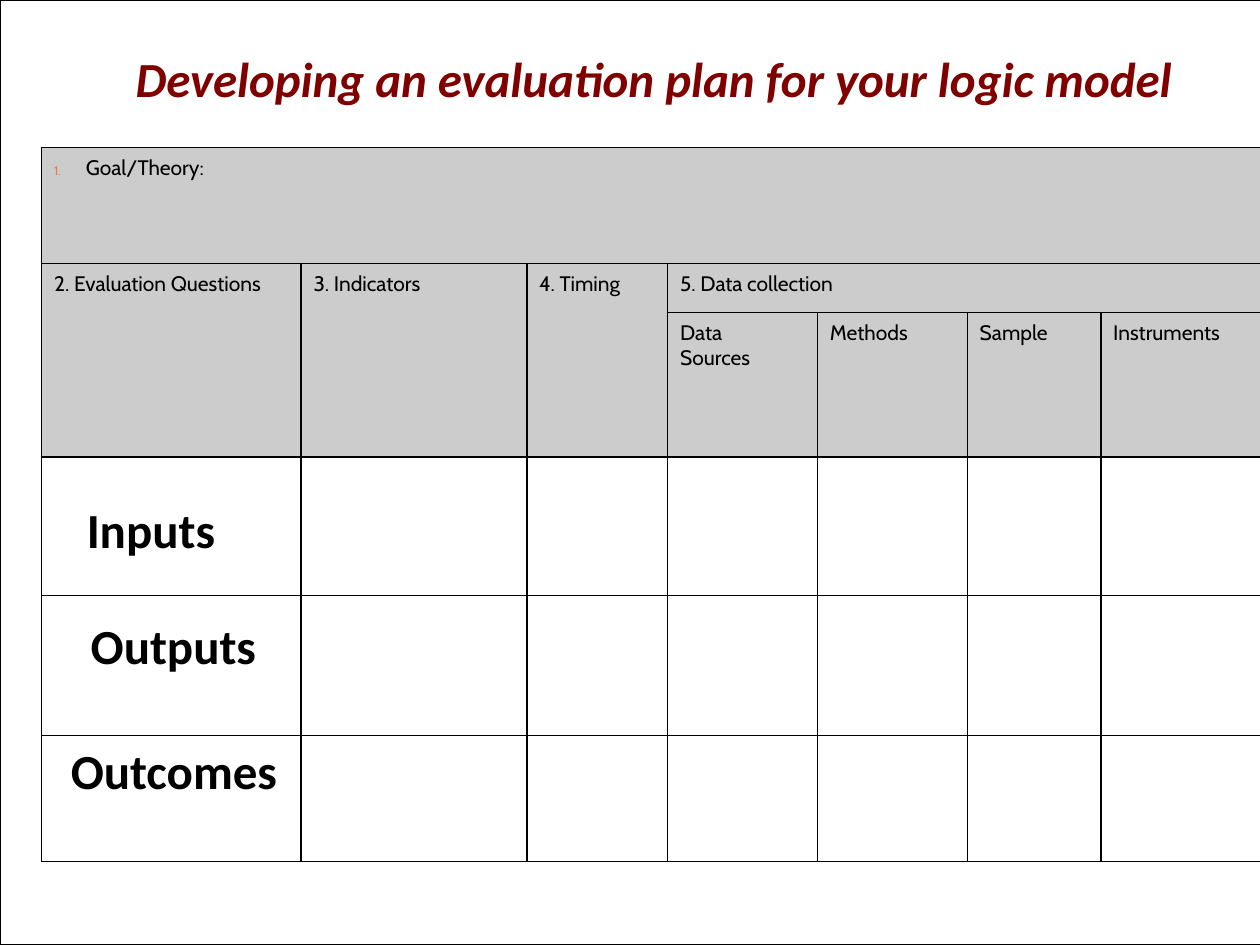
"""Build a slide with an evaluation plan table for a logic model."""
from dataclasses import dataclass

from lxml.etree import SubElement
from pptx import Presentation
from pptx.dml.color import RGBColor
from pptx.enum.shapes import MSO_SHAPE
from pptx.enum.text import PP_ALIGN
from pptx.oxml.ns import qn
from pptx.util import Cm, Pt

BLACK = RGBColor(0x00, 0x00, 0x00)
WHITE = RGBColor(0xFF, 0xFF, 0xFF)
MAROON = RGBColor(0x80, 0x00, 0x00)
GRAY = RGBColor(0xCC, 0xCC, 0xCC)
ORANGE = RGBColor(0xDD, 0x80, 0x47)
COLUMN_WIDTHS = (5.23, 4.55, 2.84, 3.02, 3.02, 2.69, 3.23)
ROW_HEIGHTS = (2.34, 0.99, 2.91, 2.8, 2.82, 2.54)
HEADER_ROWS = 3
CELL_MARGIN = Cm(0.15)


@dataclass(frozen=True)
class TextStyle:
    """Look of a paragraph; indents are in centimetres."""

    font: str
    size: int
    color: RGBColor = BLACK
    bold: bool = False
    italic: bool = False
    alignment: PP_ALIGN = PP_ALIGN.LEFT
    left: float = 0.1
    indent: float = 0
    line_spacing: float = 1.0
    numbered: bool = False


@dataclass(frozen=True)
class Entry:
    """Text of a table cell and the rows and columns it spans."""

    row: int
    column: int
    lines: tuple[str, ...]
    style: TextStyle
    row_span: int = 1
    column_span: int = 1


@dataclass(frozen=True)
class Label:
    """Text box with its place and margins in centimetres."""

    text: str
    left: float
    top: float
    width: float
    height: float
    style: TextStyle
    margins: tuple[float, float, float, float] = (0, 0, 0.1, 0)


TITLE = TextStyle("Calibri", 28, MAROON, True, True, PP_ALIGN.CENTER, 1.02, -0.79, 0.8)
HEADER = TextStyle("Cabin", 12)
GOAL = TextStyle("Cabin", 12, left=0.74, indent=-0.64, numbered=True)
QUESTIONS = TextStyle("Cabin", 12, left=0.58, indent=-0.48)
STAGE = TextStyle("Calibri", 28, bold=True)
STAGE_CENTERED = TextStyle("Calibri", 28, bold=True, alignment=PP_ALIGN.CENTER)

ENTRIES = (
    Entry(0, 0, ("Goal/Theory:",), GOAL, column_span=7),
    Entry(1, 0, ("2. Evaluation Questions",), QUESTIONS, row_span=2),
    Entry(1, 1, ("3. Indicators",), HEADER, row_span=2),
    Entry(1, 2, ("4. Timing",), HEADER, row_span=2),
    Entry(1, 3, ("5. Data collection",), HEADER, column_span=4),
    Entry(2, 3, ("Data", "Sources"), HEADER),
    Entry(2, 4, ("Methods",), HEADER),
    Entry(2, 5, ("Sample",), HEADER),
    Entry(2, 6, ("Instruments",), HEADER),
    Entry(5, 0, ("Outcomes",), STAGE_CENTERED),
)
HEADING = Label("Developing an evaluation plan for your logic model", 0, 1.07, 26.24, 1.65,
                TITLE, (0.25, 0.13, 0.36, 0.13))
STAGE_LABELS = (
    Label("Outputs", 1.17, 12.4, 4.65, 2.08, STAGE_CENTERED),
    Label("Inputs", 1.65, 10.06, 3.4, 1.19, STAGE),
)


def add_number(properties) -> None:
    """Give paragraph properties a small orange automatic number."""
    color = SubElement(properties, qn("a:buClr"))
    SubElement(color, qn("a:srgbClr"), val=str(ORANGE))
    SubElement(properties, qn("a:buSzPct"), val="60000")
    SubElement(properties, qn("a:buFont"), typeface="+mj-lt")
    SubElement(properties, qn("a:buAutoNum"), type="arabicPeriod")


def write_lines(text_frame, lines: tuple[str, ...], style: TextStyle) -> None:
    """Write each line as a styled paragraph."""
    for index, line in enumerate(lines):
        paragraph = text_frame.add_paragraph() if index else text_frame.paragraphs[0]
        paragraph.alignment = style.alignment
        paragraph.line_spacing = style.line_spacing
        properties = paragraph._p.get_or_add_pPr()
        properties.set("marL", str(Cm(style.left)))
        properties.set("indent", str(Cm(style.indent)))
        if style.numbered:
            add_number(properties)
        run = paragraph.add_run()
        run.text = line
        run.font.name = style.font
        run.font.size = Pt(style.size)
        run.font.bold = style.bold
        run.font.italic = style.italic
        run.font.color.rgb = style.color


def add_label(slide, label: Label) -> None:
    """Add a wrapped text box."""
    box = slide.shapes.add_textbox(
        Cm(label.left), Cm(label.top), Cm(label.width), Cm(label.height))
    text_frame = box.text_frame
    text_frame.word_wrap = True
    (text_frame.margin_left, text_frame.margin_top,
     text_frame.margin_right, text_frame.margin_bottom) = map(Cm, label.margins)
    write_lines(text_frame, (label.text,), label.style)


def add_frame(slide) -> None:
    """Add the white panel with a thin black outline."""
    shape = slide.shapes.add_shape(MSO_SHAPE.RECTANGLE, 0, 0, Cm(26.24), Cm(19.05))
    shape.shadow.inherit = False
    shape.fill.solid()
    shape.fill.fore_color.rgb = WHITE
    shape.line.color.rgb = BLACK
    shape.line.width = Pt(1)


def format_cell(cell, is_header: bool) -> None:
    """Set the borders, fill and margins of a cell."""
    properties = cell._tc.get_or_add_tcPr()
    for side in ("a:lnL", "a:lnR", "a:lnT", "a:lnB"):
        border = SubElement(properties, qn(side), w=str(Pt(1)))
        fill = SubElement(border, qn("a:solidFill"))
        SubElement(fill, qn("a:srgbClr"), val=str(BLACK))
    if is_header:
        cell.fill.solid()
        cell.fill.fore_color.rgb = GRAY
    else:
        cell.fill.background()
    cell.margin_left = cell.margin_right = CELL_MARGIN
    cell.margin_top = cell.margin_bottom = CELL_MARGIN


def add_plan_table(slide) -> None:
    """Add the evaluation plan table."""
    table = slide.shapes.add_table(
        len(ROW_HEIGHTS), len(COLUMN_WIDTHS), Cm(0.84), Cm(2.97),
        Cm(sum(COLUMN_WIDTHS)), Cm(sum(ROW_HEIGHTS))).table
    table.first_row = table.horz_banding = False
    for column, width in zip(table.columns, COLUMN_WIDTHS):
        column.width = Cm(width)
    for index, (row, height) in enumerate(zip(table.rows, ROW_HEIGHTS)):
        row.height = Cm(height)
        for cell in row.cells:
            format_cell(cell, index < HEADER_ROWS)
    for entry in ENTRIES:
        cell = table.cell(entry.row, entry.column)
        if entry.row_span > 1 or entry.column_span > 1:
            cell.merge(table.cell(entry.row + entry.row_span - 1,
                                  entry.column + entry.column_span - 1))
        write_lines(cell.text_frame, entry.lines, entry.style)


def main() -> None:
    """Build and save the presentation."""
    presentation = Presentation()
    presentation.slide_width = Cm(25.4)
    presentation.slide_height = Cm(19.05)
    slide = presentation.slides.add_slide(presentation.slide_layouts[6])
    add_frame(slide)
    add_label(slide, HEADING)
    add_plan_table(slide)
    for label in STAGE_LABELS:
        add_label(slide, label)
    presentation.save("out.pptx")


if __name__ == "__main__":
    main()
